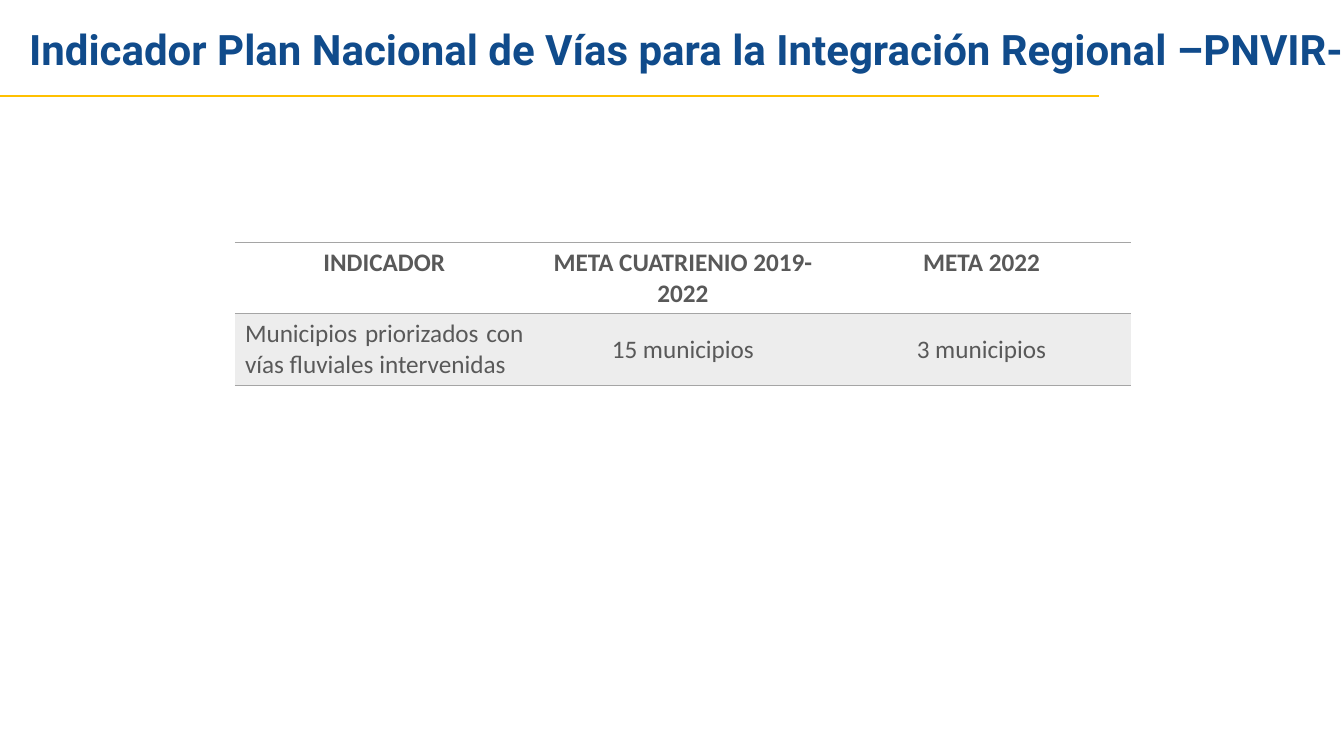
"""Build the slide with the PNVIR indicator table."""
import dataclasses

import lxml.etree
import pptx
import pptx.dml.color
import pptx.enum.shapes
import pptx.enum.text
import pptx.oxml.ns
import pptx.util

Pt = pptx.util.Pt
Align = pptx.enum.text.PP_ALIGN
Anchor = pptx.enum.text.MSO_ANCHOR
qn = pptx.oxml.ns.qn

COLORS = {
    "title": "104B8B",
    "rule": "FFC000",
    "text": "595959",
    "edge": "A5A5A5",
    "band": "EDEDED",
}


@dataclasses.dataclass
class Entry:
    text: str
    align: Align = Align.CENTER
    anchor: Anchor = Anchor.MIDDLE
    bold: bool = False
    band: bool = True


def head(text: str) -> Entry:
    return Entry(text, anchor=Anchor.TOP, bold=True, band=False)


ROWS = [
    [head("INDICADOR"), head("META CUATRIENIO 2019-2022"), head("META 2022")],
    [
        Entry("Municipios priorizados con vías fluviales intervenidas",
              Align.JUSTIFY, Anchor.TOP),
        Entry("15 municipios"),
        Entry("3 municipios"),
    ],
]


def color(name: str) -> pptx.dml.color.RGBColor:
    return pptx.dml.color.RGBColor.from_string(COLORS[name])


def style(par, face: str, size: float, tint: str, bold: bool) -> None:
    for run in par.runs:
        run.font.name = face
        run.font.size = Pt(size)
        run.font.bold = bold
        run.font.color.rgb = color(tint)


def add_edges(cell) -> None:
    props = cell._tc.get_or_add_tcPr()
    for side in "LRTB":
        line = lxml.etree.SubElement(props, qn(f"a:ln{side}"), w=str(Pt(1)))
        if side in "LR":
            lxml.etree.SubElement(line, qn("a:noFill"))
        else:
            fill = lxml.etree.SubElement(line, qn("a:solidFill"))
            lxml.etree.SubElement(fill, qn("a:srgbClr"), val=COLORS["edge"])


def fill_cell(cell, entry: Entry) -> None:
    add_edges(cell)
    if entry.band:
        cell.fill.solid()
        cell.fill.fore_color.rgb = color("band")
    else:
        cell.fill.background()
    cell.vertical_anchor = entry.anchor
    par = cell.text_frame.paragraphs[0]
    par.text = entry.text
    par.alignment = entry.align
    style(par, "Calibri", 18, "text", entry.bold)


def add_grid(slide) -> None:
    frame = slide.shapes.add_table(
        len(ROWS), len(ROWS[0]), Pt(167.8), Pt(173.2), Pt(640), Pt(102))
    table = frame.table
    table.first_row = table.horz_banding = False
    for row, items in enumerate(ROWS):
        for col, entry in enumerate(items):
            fill_cell(table.cell(row, col), entry)


def add_rule(slide) -> None:
    rule = slide.shapes.add_connector(
        pptx.enum.shapes.MSO_CONNECTOR.STRAIGHT,
        Pt(0), Pt(68.5), Pt(785), Pt(68.5))
    rule.line.color.rgb = color("rule")
    rule.line.width = Pt(1.5)
    lxml.etree.SubElement(rule._element.spPr, qn("a:effectLst"))


def set_title(slide, text: str) -> None:
    title = slide.shapes.title
    title.left, title.top = Pt(13.7), Pt(13)
    title.width, title.height = Pt(975), Pt(44)
    frame = title.text_frame
    frame.text = text
    frame.word_wrap = True
    frame.vertical_anchor = Anchor.TOP
    frame.auto_size = pptx.enum.text.MSO_AUTO_SIZE.SHAPE_TO_FIT_TEXT
    par = frame.paragraphs[0]
    par.alignment = Align.LEFT
    style(par, "Roboto", 30, "title", True)


def main() -> None:
    deck = pptx.Presentation()
    deck.slide_width, deck.slide_height = Pt(960), Pt(540)
    slide = deck.slides.add_slide(deck.slide_layouts.get_by_name("Title Only"))
    add_grid(slide)
    add_rule(slide)
    set_title(slide, "Indicador Plan Nacional de Vías para la "
                     "Integración Regional –PNVIR-")
    deck.save("out.pptx")


if __name__ == "__main__":
    main()
